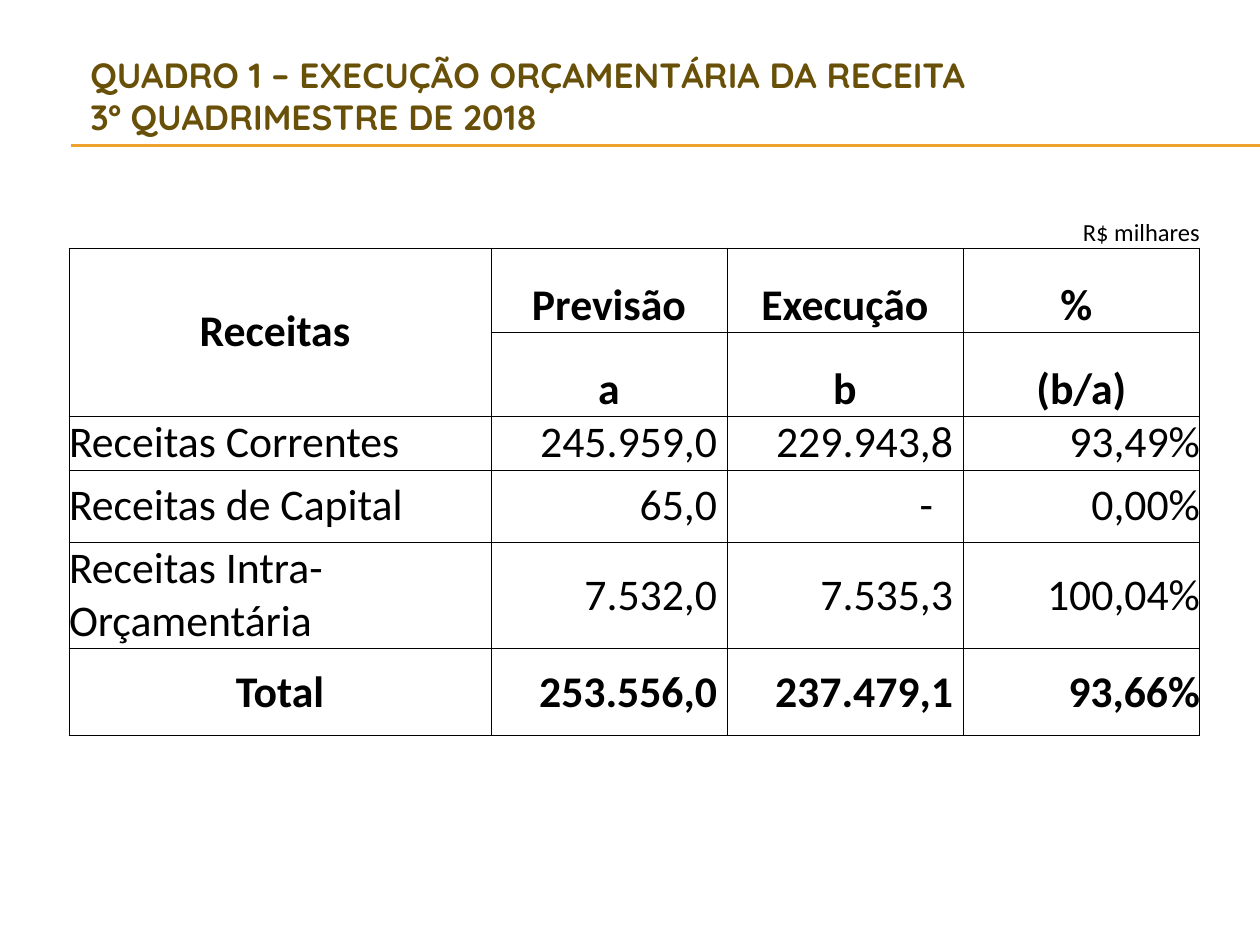
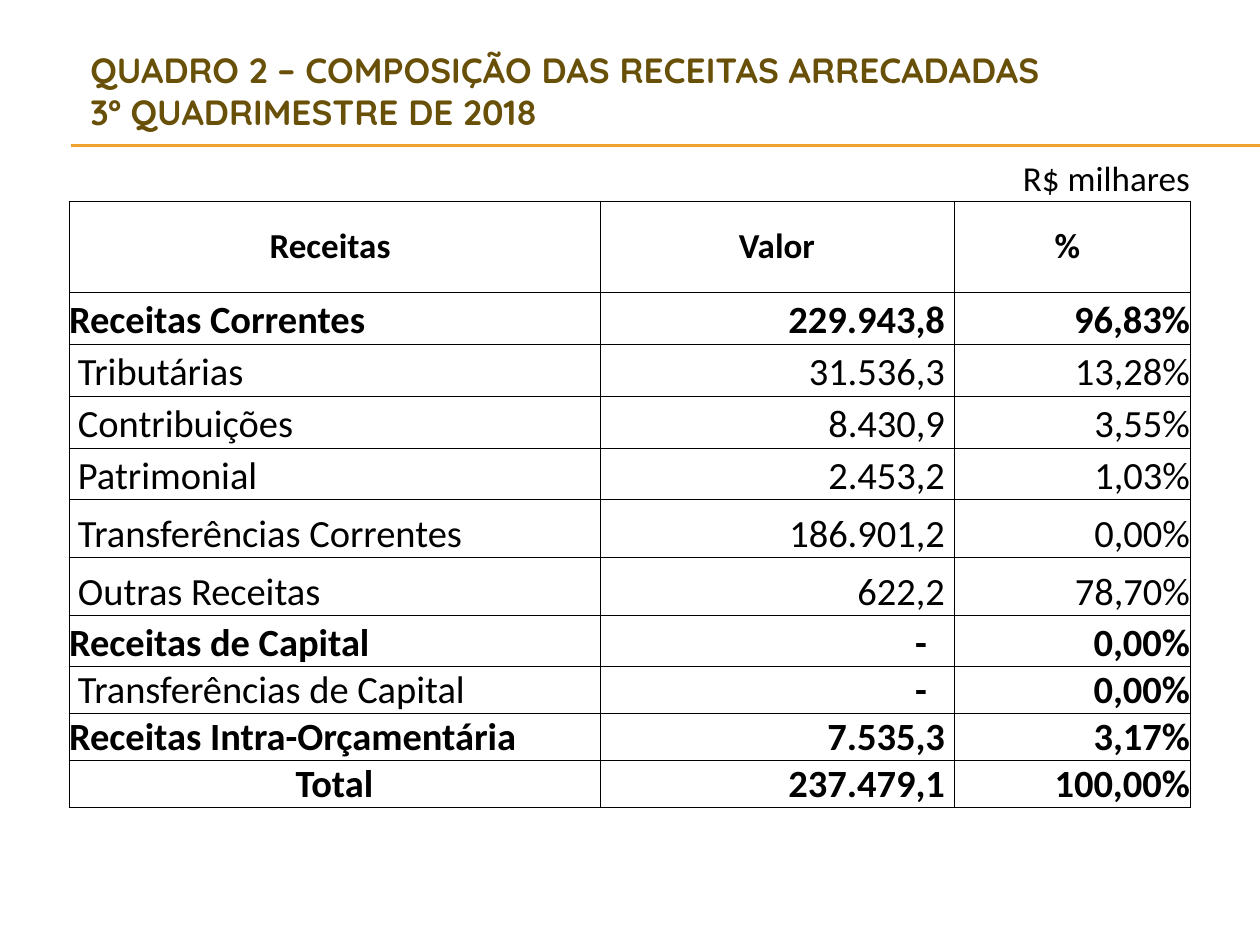
"""Build two slides with budget revenue tables."""
from collections import namedtuple
from dataclasses import dataclass

from lxml import etree
from pptx import Presentation
from pptx import util as u
from pptx.dml.color import RGBColor
from pptx.enum import shapes, text
from pptx.oxml.ns import qn

SCALE = u.Inches(1) / 126
LEFT, CENTER, RIGHT = text.PP_ALIGN.LEFT, text.PP_ALIGN.CENTER, text.PP_ALIGN.RIGHT
MIDDLE, BOTTOM = text.MSO_ANCHOR.MIDDLE, text.MSO_ANCHOR.BOTTOM

Row = namedtuple("Row", "height kind texts")


@dataclass(frozen=True)
class Theme:
    title_color: str = "695008"
    rule_color: str = "F0A22E"
    ink: str = "000000"
    title_font: str = "Quicksand"
    body_font: str = "Calibri"
    title_size: int = 20
    rule_width: float = 0.75
    border_width: float = 0.5


def px(length):
    return u.Emu(round(length * SCALE))


def write(para, words, *, size, font, color, bold=False, align=LEFT):
    para.alignment = align
    for number, part in enumerate(words.split("\n")):
        if number:
            para.add_line_break()
        span = para.add_run()
        span.text = part
        span.font.size = u.Pt(size)
        span.font.name = font
        span.font.bold = bold
        span.font.color.rgb = RGBColor.from_string(color)


class Sheet:
    def __init__(self, deck, theme):
        self.deck = deck
        self.theme = theme
        self.page = None

    def start(self, title, height):
        self.page = self.deck.slides.add_slide(self.deck.slide_layouts[6])
        for y in (145, 146):
            self.rule(71, y, 1260)
        self.title(title, height)

    def rule(self, left, y, right):
        line = self.page.shapes.add_connector(
            shapes.MSO_CONNECTOR.STRAIGHT, px(left), px(y), px(right), px(y))
        line.line.color.rgb = RGBColor.from_string(self.theme.rule_color)
        line.line.width = u.Pt(self.theme.rule_width)
        etree.SubElement(line._element.spPr, qn("a:effectLst"))

    def title(self, words, height):
        box = self.page.shapes.add_textbox(px(78), px(59), px(1130), px(height))
        frame = box.text_frame
        frame.word_wrap = True
        frame.vertical_anchor = MIDDLE
        write(frame.paragraphs[0], words, size=self.theme.title_size,
              font=self.theme.title_font, color=self.theme.title_color, bold=True)

    def border(self, cell, sides):
        props = cell._tc.get_or_add_tcPr()
        for side in "LRTB":
            line = etree.SubElement(props, qn(f"a:ln{side}"),
                                    w=str(u.Pt(self.theme.border_width)))
            if side in sides:
                fill = etree.SubElement(line, qn("a:solidFill"))
                etree.SubElement(fill, qn("a:srgbClr"), val=self.theme.ink)
            else:
                etree.SubElement(line, qn("a:noFill"))

    def fill_cell(self, cell, words, kind, column, last, sizes, pad, anchors):
        label = column == 0
        if kind == "unit":
            align, bold, anchor, gap = RIGHT, False, BOTTOM, 0
        elif kind == "head":
            align, bold, gap = CENTER, True, pad if words in ("Receitas", "%") else 0
            anchor = MIDDLE if label else anchors["head"]
        else:
            align = (CENTER if kind == "total" else LEFT) if label else RIGHT
            bold = kind in ("main", "total") or kind == "mixed" and not label
            anchor = anchors["body"]
            gap = 0 if label or last else 3 * pad if words == "-" else pad
        indent = pad if label and kind in ("sub", "mixed") else 0
        cell.margin_left, cell.margin_right = px(indent), px(gap)
        cell.vertical_anchor = anchor
        write(cell.text_frame.paragraphs[0], words, size=sizes.get(kind, sizes["body"]),
              font=self.theme.body_font, color=self.theme.ink, bold=bold, align=align)

    def table(self, top, widths, rows, merges, **style):
        frame = self.page.shapes.add_table(
            len(rows), len(widths), px(69), px(top), px(sum(widths)),
            px(sum(row.height for row in rows)))
        grid = frame.table
        grid.first_row = grid.horz_banding = False
        for column, width in zip(grid.columns, widths):
            column.width = px(width)
        for line, row in zip(grid.rows, rows):
            line.height = px(row.height)
            for column, (cell, words) in enumerate(zip(line.cells, row.texts)):
                cell.margin_left = cell.margin_right = 0
                cell.margin_top = cell.margin_bottom = 0
                self.border(cell, "B" if row.kind == "unit" else "LRTB")
                cell.fill.background()
                if words:
                    last = column == len(widths) - 1
                    self.fill_cell(cell, words, row.kind, column, last, **style)
        for first, end in merges:
            grid.cell(*first).merge(grid.cell(*end))


def execution(sheet):
    sheet.start("QUADRO 1 – EXECUÇÃO ORÇAMENTÁRIA DA RECEITA\n3º QUADRIMESTRE DE 2018", 73)
    rows = [
        Row(51, "unit", ("", "", "", "R$ milhares")),
        Row(84, "head", ("Receitas", "Previsão", "Execução", "%")),
        Row(84, "head", ("", "a", "b", "(b/a)")),
        Row(54, "plain", ("Receitas Correntes", "245.959,0", "229.943,8", "93,49%")),
        Row(72, "plain", ("Receitas de Capital", "65,0", "-", "0,00%")),
        Row(107, "plain", ("Receitas Intra-Orçamentária", "7.532,0", "7.535,3", "100,04%")),
        Row(87, "total", ("Total", "253.556,0", "237.479,1", "93,66%")),
    ]
    sheet.table(197, (422, 236, 236, 237), rows, [((1, 0), (2, 0))],
                sizes={"unit": 14, "body": 25}, pad=10,
                anchors={"head": BOTTOM, "body": MIDDLE})


def composition(sheet):
    sheet.start("QUADRO 2 – COMPOSIÇÃO DAS RECEITAS ARRECADADAS\n3º QUADRIMESTRE DE 2018", 63)
    entries = [
        (91, "head", "Receitas", "Valor", "%"),
        (52, "main", "Receitas Correntes", "229.943,8", "96,83%"),
        (52, "sub", "Tributárias", "31.536,3", "13,28%"),
        (52, "sub", "Contribuições", "8.430,9", "3,55%"),
        (52, "sub", "Patrimonial", "2.453,2", "1,03%"),
        (58, "sub", "Transferências Correntes", "186.901,2", "0,00%"),
        (58, "sub", "Outras Receitas", "622,2", "78,70%"),
        (51, "main", "Receitas de Capital", "-", "0,00%"),
        (47, "mixed", "Transferências de Capital", "-", "0,00%"),
        (47, "main", "Receitas Intra-Orçamentária", "7.535,3", "3,17%"),
        (47, "total", "Total", "237.479,1", "100,00%"),
    ]
    rows = [Row(44, "unit", ("", "", "", "R$ milhares"))]
    rows += [Row(height, kind, (label, value, "", share))
             for height, kind, label, value, share in entries]
    merges = [((line, 1), (line, 2)) for line in range(1, len(rows))]
    sheet.table(157, (531, 121, 233, 236), rows, merges,
                sizes={"unit": 20, "head": 20, "body": 22}, pad=9,
                anchors={"head": MIDDLE, "body": BOTTOM})


def main():
    deck = Presentation()
    deck.slide_width, deck.slide_height = px(1260), px(945)
    sheet = Sheet(deck, Theme())
    execution(sheet)
    composition(sheet)
    deck.save("out.pptx")


if __name__ == "__main__":
    main()
